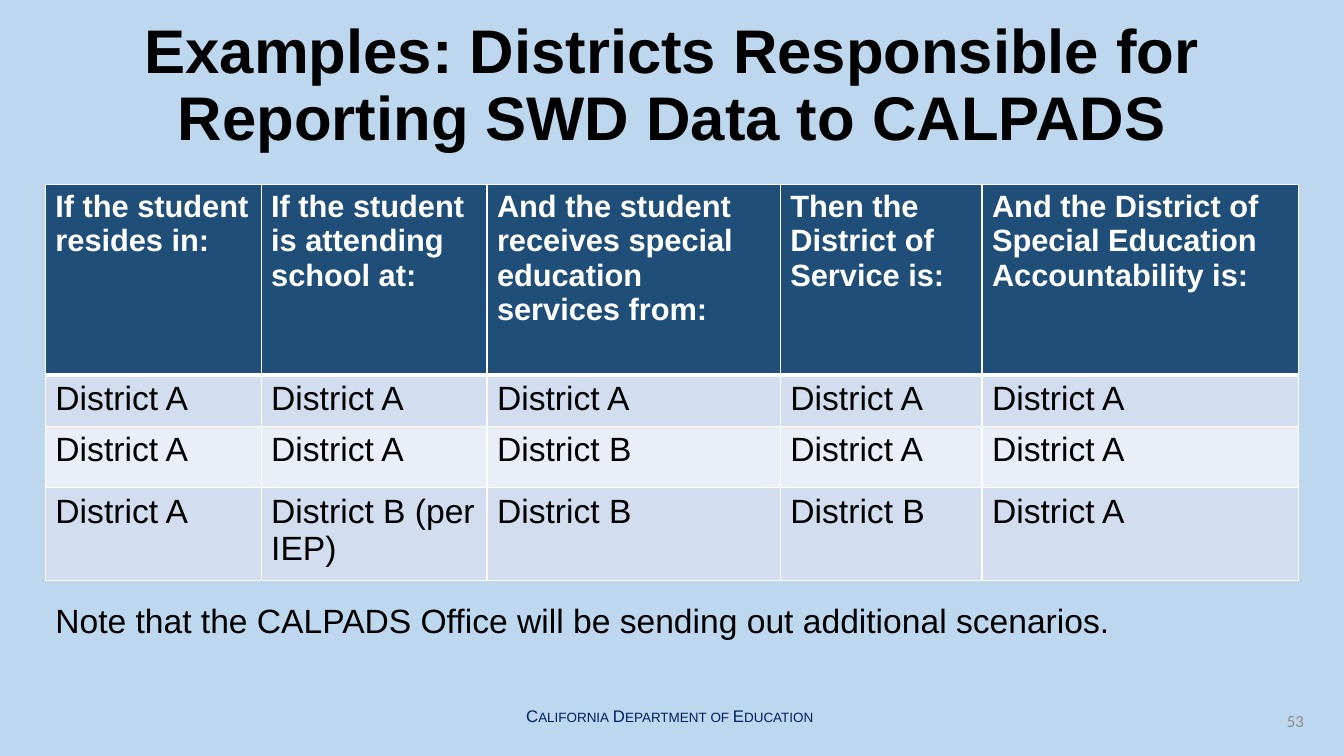
from pptx import Presentation
from pptx.dml.color import RGBColor
from pptx.enum.text import MSO_ANCHOR, MSO_AUTO_SIZE, PP_ALIGN
from pptx.oxml import parse_xml
from pptx.oxml.ns import nsdecls, qn
from pptx.util import Inches, Pt

LEFT, CENTER, RIGHT = PP_ALIGN.LEFT, PP_ALIGN.CENTER, PP_ALIGN.RIGHT
TOP, MIDDLE = MSO_ANCHOR.TOP, MSO_ANCHOR.MIDDLE
GROW = MSO_AUTO_SIZE.SHAPE_TO_FIT_TEXT

SKY = RGBColor(0xBD, 0xD7, 0xEE)
BLACK = RGBColor(0, 0, 0)
WHITE = RGBColor(255, 255, 255)
NAVY = RGBColor(0, 0x20, 0x60)
GRAY = RGBColor(0x8C, 0x8C, 0x8C)
HEAD = RGBColor(0x1F, 0x4E, 0x79)
BANDS = (RGBColor(0xEA, 0xEF, 0xF7), RGBColor(0xD2, 0xDE, 0xEF))

TITLE = "Examples: Districts Responsible for Reporting SWD Data to CALPADS"
NOTE = "Note that the CALPADS Office will be sending out additional scenarios."
AGENCY = "California Department of Education"
PAGE = "53"
A, B = "District A", "District B"
ROWS = [
    ("If the student resides in:",
     "If the student is attending school at:",
     "And the student receives special education services from:",
     "Then the District of Service is:",
     "And the District of Special Education Accountability is:"),
    (A, A, A, A, A),
    (A, A, B, A, A),
    (A, B + " (per IEP)", B, B, A),
]
WIDTHS = (2.14, 2.24, 2.91, 2, 3.14)
HEIGHTS = (1.89, 0.51, 0.61, 0.92)
MARGIN = 0.45
GRID_TOP = 1.83


def style(para, size, color, bold=False, font="Arial"):
    for run in para.runs:
        run.font.name = font
        run.font.size = Pt(size)
        run.font.bold = bold
        run.font.color.rgb = color


def add_text(slide, text, box, size, color, align=LEFT, anchor=TOP,
             bold=False, font="Arial", wrap=True):
    shape = slide.shapes.add_textbox(*map(Inches, box))
    frame = shape.text_frame
    frame.text = text
    frame.word_wrap = wrap
    frame.vertical_anchor = anchor
    para = frame.paragraphs[0]
    para.alignment = align
    style(para, size, color, bold, font)
    return shape


def add_borders(cell_props, row):
    """White rules round a cell, thicker between header and body."""
    top = 3 if row == 1 else 1
    low = 3 if row == 0 else 1
    sides = (("L", 1), ("R", 1), ("T", top), ("B", low))
    for place, (side, width) in enumerate(sides):
        cell_props.insert(place, parse_xml(
            f'<a:ln{side} {nsdecls("a")} w="{Pt(width)}"><a:solidFill>'
            f'<a:srgbClr val="{WHITE}"/></a:solidFill></a:ln{side}>'))


def add_grid(slide):
    frame = slide.shapes.add_table(
        len(ROWS), len(WIDTHS), Inches(MARGIN), Inches(GRID_TOP),
        Inches(sum(WIDTHS)), Inches(sum(HEIGHTS)))
    table = frame.table
    for col, width in zip(table.columns, WIDTHS):
        col.width = Inches(width)
    for r, texts in enumerate(ROWS):
        table.rows[r].height = Inches(HEIGHTS[r])
        header = r == 0
        for c, text in enumerate(texts):
            cell = table.cell(r, c)
            cell.text = text
            cell.fill.solid()
            cell.fill.fore_color.rgb = HEAD if header else BANDS[r % 2]
            style(cell.text_frame.paragraphs[0], 22 if header else 24,
                  WHITE if header else BLACK, header)
    for i, props in enumerate(frame.element.iter(qn("a:tcPr"))):
        add_borders(props, i // len(WIDTHS))


def main():
    deck = Presentation()
    deck.slide_width, deck.slide_height = Inches(13.33), Inches(7.5)
    slide = deck.slides.add_slide(deck.slide_layouts[6])
    slide.background.fill.solid()
    slide.background.fill.fore_color.rgb = SKY

    agency = add_text(slide, AGENCY, (5.12, 6.95, 3.09, 0.3), 12, NAVY,
                      wrap=False)
    agency.text_frame.auto_size = GROW
    for props in agency.element.iter(qn("a:rPr")):
        props.set("cap", "small")

    title = add_text(slide, TITLE, (0.59, 0.17, 12.16, 1.39), 44, BLACK,
                     CENTER, MIDDLE, bold=True)
    title.text_frame.paragraphs[0].line_spacing = 0.9
    add_grid(slide)
    add_text(slide, PAGE, (10.03, 6.95, 3, 0.4), 12, GRAY, RIGHT, MIDDLE,
             font="Calibri")
    note = add_text(slide, NOTE, (MARGIN, 5.9, 11.78, 0.5), 24, BLACK)
    note.text_frame.auto_size = GROW
    deck.save("out.pptx")


if __name__ == "__main__":
    main()
